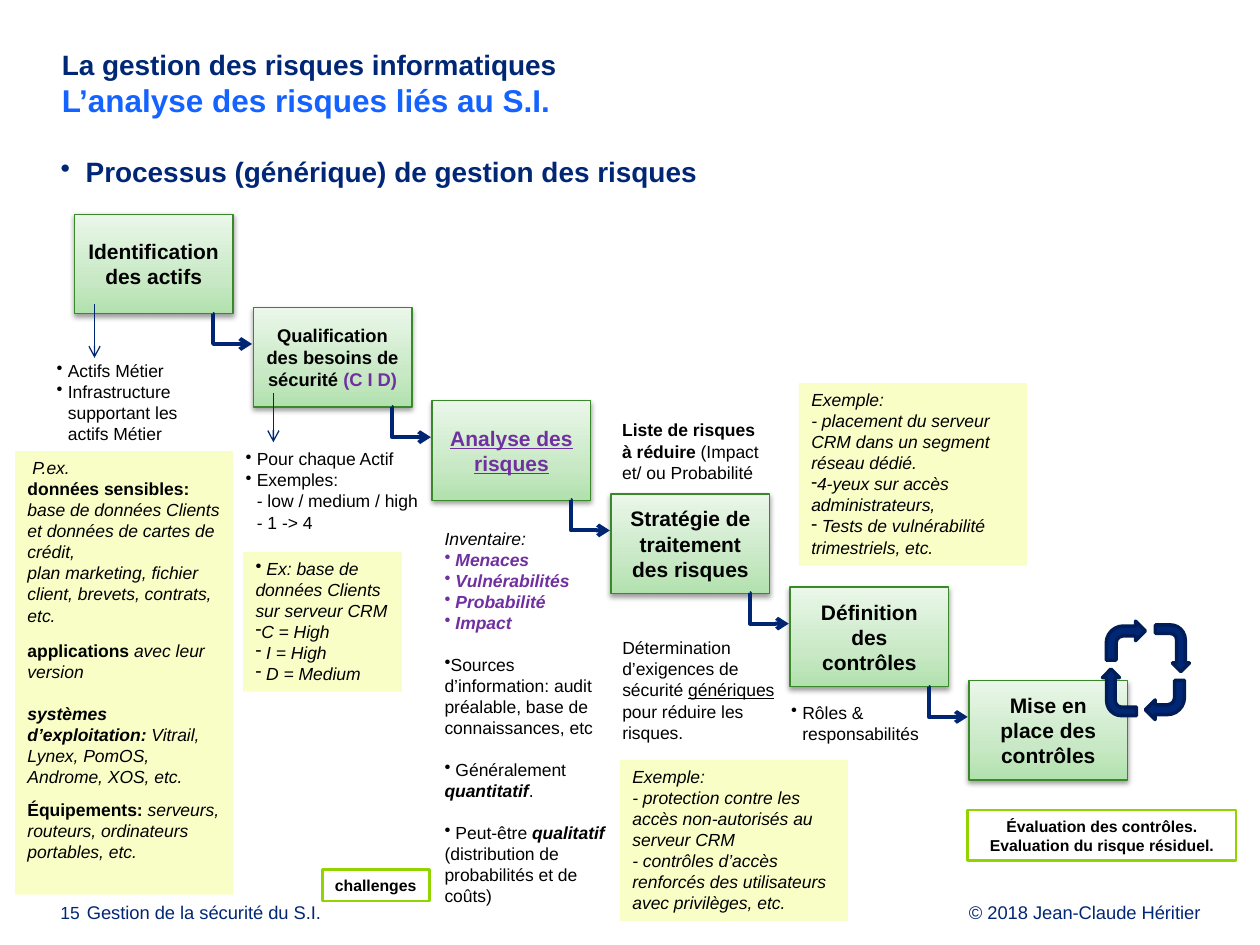
import pptx
import pptx.util
import pptx.dml.color
import pptx.enum.shapes
import pptx.enum.text
import pptx.oxml
import pptx.oxml.ns

# Content lengths are columns and rows of a 100 x 75 grid
WIDTH, HEIGHT = pptx.util.Inches(10), pptx.util.Inches(7.5)
COLUMN, ROW = WIDTH / 100, HEIGHT / 75

COLORS = {
    "navy": "002776", "blue": "1462FF", "black": "000000", "purple": "7030A0",
    "arrow": "002673", "cycle edge": "001D57", "cream": "F9FEC7",
    "white": "FFFFFF", "lime": "92D400", "step edge": "39892B",
    "step low": "B1E1AD", "step mid": "C9E9C6", "step high": "EAF7E9",
}
STYLES = {"b": ("bold", True), "i": ("italic", True), "u": ("underline", True)}
LEFT, CENTER, RIGHT = (pptx.enum.text.PP_ALIGN.LEFT, pptx.enum.text.PP_ALIGN.CENTER,
                       pptx.enum.text.PP_ALIGN.RIGHT)
SHAPES = pptx.enum.shapes.MSO_SHAPE

# A paragraph is (bullet, space after, runs); a run is (text, style letters, changes)
HEADINGS = [
    ((4.5, 3.8, 92.1, 6.9), {"insets": (0.04, 0, 0, 0), "color": "navy"}, [
        ("", 0, [("La gestion des risques informatiques\n", "b", {"size": 16}),
                 ("L’analyse des risques liés au S.I.", "b", {"size": 18, "color": "blue"})])]),
    ((4.4, 12.3, 92.1, 57.8), {"insets": (0.04, 0, 0, 0), "color": "navy", "size": 16, "hang": 0.2}, [
        ("•", 2.7, [("Processus (générique) de gestion des risques", "b")])]),
]
FOOTER = {"insets": (0, 0, 0, 0), "color": "navy", "leading": 10.8}
FOOTERS = [
    ((70, 71.8, 25.3, 1.6), {**FOOTER, "size": 10.5, "align": RIGHT},
     [("", 0, [("© 2018 Jean-Claude Héritier", "")])]),
    ((6.9, 71.8, 25.3, 1.6), {**FOOTER, "size": 10.5},
     [("", 0, [("Gestion de la sécurité du S.I.", "")])]),
    ((4.8, 71.8, 2.6, 1.6), FOOTER, [("", 0, [("15", "")])]),
]
STEPS = [
    (12, [("Identification des actifs", "b")]),
    (10.5, [("Qualification des besoins de sécurité ", "b"), ("(C I D)", "b", {"color": "purple"})]),
    (12, [("Analyse des risques", "bu", {"color": "purple"})]),
    (12, [("Stratégie de traitement des risques", "b")]),
    (12, [("Définition des contrôles", "b")]),
    (12, [("Mise en place des contrôles", "b")]),
]
CREAM = {"fill": "cream"}
FRAMED = {"fill": "white", "edge": "lime", "size": 9}
HANGING = {"hang": 0.09}
NOTES = [
    ((3.5, 28.1, 11.8, 7.7), HANGING, [
        ("•", 0, [("Actifs Métier", "")]),
        ("•", 0, [("Infrastructure supportant les actifs Métier", "")])]),
    ((1.2, 35.8, 17.3, 35.2), CREAM, [
        ("", 0, [(" P.ex.\n", "i"), ("données sensibles:", "b")]),
        ("", 8, [("base de données Clients et données de cartes de crédit,\n"
                  "plan marketing, fichier client, brevets, contrats, etc.", "i")]),
        ("", 12, [("applications ", "b"), ("avec leur version", "i")]),
        ("", 7, [("systèmes d’exploitation: ", "bi"),
                 ("Vitrail, Lynex, PomOS, Androme, XOS, etc.", "i")]),
        ("", 0, [("Équipements: ", "b"), ("serveurs, routeurs, ordinateurs portables, etc.", "i")])]),
    ((18.5, 35.1, 16.5, 9.4), HANGING, [
        ("•", 0, [("Pour chaque Actif", "")]),
        ("•", 0, [("Exemples:\n- low / medium / high\n- 1 -> 4", "")])]),
    ((19.3, 43.8, 12.6, 11.1), CREAM, [
        ("•", 0, [(" Ex: base de données Clients sur serveur CRM", "i")]),
        ("-", 0, [("C = High", "i")]),
        ("-", 0, [(" I = High", "i")]),
        ("-", 0, [(" D = Medium", "i")])]),
    ((34.3, 41.4, 15, 31.3), {}, [
        ("", 0, [("Inventaire:", "i")]),
        ("•", 0, [(" Menaces", "bi", {"color": "purple"})]),
        ("•", 0, [(" Vulnérabilités", "bi", {"color": "purple"})]),
        ("•", 0, [(" Probabilité", "bi", {"color": "purple"})]),
        ("•", 12, [(" Impact", "bi", {"color": "purple"})]),
        ("•", 12, [("Sources d’information: audit préalable, base de connaissances, etc", "")]),
        ("•", 12, [(" Généralement ", ""), ("quantitatif", "bi"), (".", "")]),
        ("•", 0, [(" Peut-être ", ""), ("qualitatif", "bi"),
                  (" (distribution de probabilités et de coûts)", "")])]),
    ((25.6, 69, 8.5, 2.5), {**FRAMED, "wrap": False}, [("", 0, [("challenges", "b")])]),
    ((48.4, 32.8, 13.4, 6.1), {}, [
        ("", 0, [("Liste de risques à réduire", "b"), (" (Impact et/ ou Probabilité", "")])]),
    ((48.4, 50.1, 14.2, 9.4), {}, [
        ("", 0, [("Détermination d’exigences de sécurité ", ""), ("génériques", "u"),
                 (" pour réduire les risques.", "")])]),
    ((49.2, 60.3, 18.1, 12.8), CREAM, [
        ("", 0, [("Exemple:\n- protection contre les accès non-autorisés au serveur CRM\n"
                  "- contrôles d’accès renforcés des utilisateurs avec privilèges, etc.", "i")])]),
    ((63.4, 30.4, 18.1, 14.5), CREAM, [
        ("", 0, [("Exemple:\n- placement du serveur CRM dans un segment réseau dédié.", "i")]),
        ("-", 0, [("4-yeux sur accès administrateurs,", "i")]),
        ("-", 0, [(" Tests de vulnérabilité trimestriels, etc.", "i")])]),
    ((76.8, 64.3, 21.3, 4), {**FRAMED, "align": CENTER}, [
        ("", 0, [("Évaluation des contrôles.", "b")]),
        ("", 0, [("Evaluation du risque résiduel.", "b")])]),
    ((61.8, 55.2, 16.5, 4.4), HANGING, [("•", 0, [("Rôles & responsabilités", "")])]),
]
DETAIL_ARROWS = [(7.5, 24.1, 28.4), (21.7, 31.2, 35.1)]
CYCLE = [(87.8, 49.3, 3.1, 3.1), (91.2, 50.1, 3.7, 2.7),
         (90.9, 54, 3.1, 3.1), (87, 53.6, 3.7, 2.7)]
STEP_START, STEP_PITCH, STEP_SIZE = (5.9, 17), (14.2, 7.4), (12.6, 7.9)
LINK_START, LINK_SIZE = (16.9, 24.9), (3.1, 2.4)

deck = pptx.Presentation()
deck.slide_width, deck.slide_height = WIDTH, HEIGHT
slide = deck.slides.add_slide(deck.slide_layouts[6])


def rgb(name):
    return pptx.dml.color.RGBColor.from_string(COLORS[name])


def on_grid(*lengths):
    return [round(length * (ROW if i % 2 else COLUMN)) for i, length in enumerate(lengths)]


def xml(markup):
    return pptx.oxml.parse_xml(markup.replace(">", f' {pptx.oxml.ns.nsdecls("a")}>', 1)
                               if not markup.endswith("/>") or markup.count("<") > 1
                               else markup.replace("/>", f' {pptx.oxml.ns.nsdecls("a")}/>'))


def write(frame, look, paragraphs):
    insets = look.get("insets", (0.1, 0.05, 0.1, 0.05))
    frame_format = {"margin_" + side: pptx.util.Inches(inset)
                    for side, inset in zip(("left", "top", "right", "bottom"), insets)}
    frame_format.update(word_wrap=look.get("wrap", True),
                        vertical_anchor=look.get("anchor", pptx.enum.text.MSO_ANCHOR.TOP))
    for attribute, value in frame_format.items():
        setattr(frame, attribute, value)
    for number, (bullet, gap, runs) in enumerate(paragraphs):
        paragraph = frame.add_paragraph() if number else frame.paragraphs[0]
        paragraph.alignment = look.get("align", LEFT)
        paragraph.space_after = pptx.util.Pt(gap)
        if "leading" in look:
            paragraph.line_spacing = pptx.util.Pt(look["leading"])
        if bullet:
            properties = paragraph._p.get_or_add_pPr()
            hang = pptx.util.Inches(look.get("hang", 0))
            properties.set("marL", str(hang))
            properties.set("indent", str(-hang))
            properties.append(xml(f'<a:buChar char="{bullet}"/>'))
        for text, letters, *changes in runs:
            run_look = {**look, **(changes[0] if changes else {})}
            font_format = {"name": "Arial", "size": pptx.util.Pt(run_look.get("size", 10)),
                           **dict(STYLES[letter] for letter in letters)}
            for line_number, line in enumerate(text.split("\n")):
                if line_number:
                    paragraph.add_line_break()
                if line:
                    run = paragraph.add_run()
                    run.text = line
                    run.font.color.rgb = rgb(run_look.get("color", "black"))
                    for attribute, value in font_format.items():
                        setattr(run.font, attribute, value)


def add_panel(kind, place, fill, edge=None, weight=1.5):
    panel = slide.shapes.add_shape(kind, *on_grid(*place))
    panel.shadow.inherit = False
    if fill:
        panel.fill.solid()
        panel.fill.fore_color.rgb = rgb(fill)
    if edge:
        panel.line.color.rgb = rgb(edge)
        panel.line.width = pptx.util.Pt(weight)
    else:
        panel.line.fill.background()
    return panel


def add_arrow(kind, start, end, weight):
    arrow = slide.shapes.add_connector(kind, *on_grid(*start, *end))
    arrow.line.color.rgb = rgb("arrow")
    arrow.line.width = pptx.util.Pt(weight)
    arrow.line._get_or_add_ln().append(xml('<a:tailEnd type="arrow"/>'))
    arrow._element.spPr.append(xml("<a:effectLst/>"))
    return arrow


def add_text(place, look, paragraphs):
    if "fill" in look:
        box = add_panel(SHAPES.RECTANGLE, place, look["fill"], look.get("edge"))
    else:
        box = slide.shapes.add_textbox(*on_grid(*place))
    write(box.text_frame, look, paragraphs)


# Footer and headings
for entry in FOOTERS + HEADINGS:
    add_text(*entry)

# Staircase of process steps
stops = "".join(f'<a:gs pos="{share * 1000}"><a:srgbClr val="{COLORS[name]}"/></a:gs>'
                for share, name in ((0, "step low"), (35, "step mid"), (100, "step high")))
for number, (size, runs) in enumerate(STEPS):
    corner = [start + number * pitch for start, pitch in zip(STEP_START, STEP_PITCH)]
    step = add_panel(SHAPES.RECTANGLE, (*corner, *STEP_SIZE), None, "step edge", 0.75)
    properties = step._element.spPr
    properties.insert(2, xml(f'<a:gradFill rotWithShape="1"><a:gsLst>{stops}</a:gsLst>'
                             '<a:lin ang="16200000" scaled="0"/></a:gradFill>'))
    properties.find(pptx.oxml.ns.qn("a:effectLst")).append(xml(
        '<a:outerShdw blurRad="39370" dist="20320" dir="5400000" rotWithShape="0">'
        '<a:srgbClr val="000000"><a:alpha val="38000"/></a:srgbClr></a:outerShdw>'))
    write(step.text_frame, {"size": size, "align": CENTER,
                            "anchor": pptx.enum.text.MSO_ANCHOR.MIDDLE}, [("", 0, runs)])

# Links between steps, and arrows down to the details
for number in range(len(STEPS) - 1):
    start = [first + number * pitch for first, pitch in zip(LINK_START, STEP_PITCH)]
    end = [first + length for first, length in zip(start, LINK_SIZE)]
    link = add_arrow(pptx.enum.shapes.MSO_CONNECTOR.ELBOW, start, end, 2.25)
    link._element.spPr.find(".//" + pptx.oxml.ns.qn("a:avLst")).append(
        xml('<a:gd name="adj1" fmla="val 400"/>'))
for column, top, bottom in DETAIL_ARROWS:
    add_arrow(pptx.enum.shapes.MSO_CONNECTOR.STRAIGHT, (column, top), (column, bottom), 0.75)

# Notes, then the improvement cycle
for entry in NOTES:
    add_text(*entry)
for quarter, place in enumerate(CYCLE):
    add_panel(SHAPES.BENT_ARROW, place, "navy", "cycle edge", 2).rotation = quarter * 90

deck.save("out.pptx")
